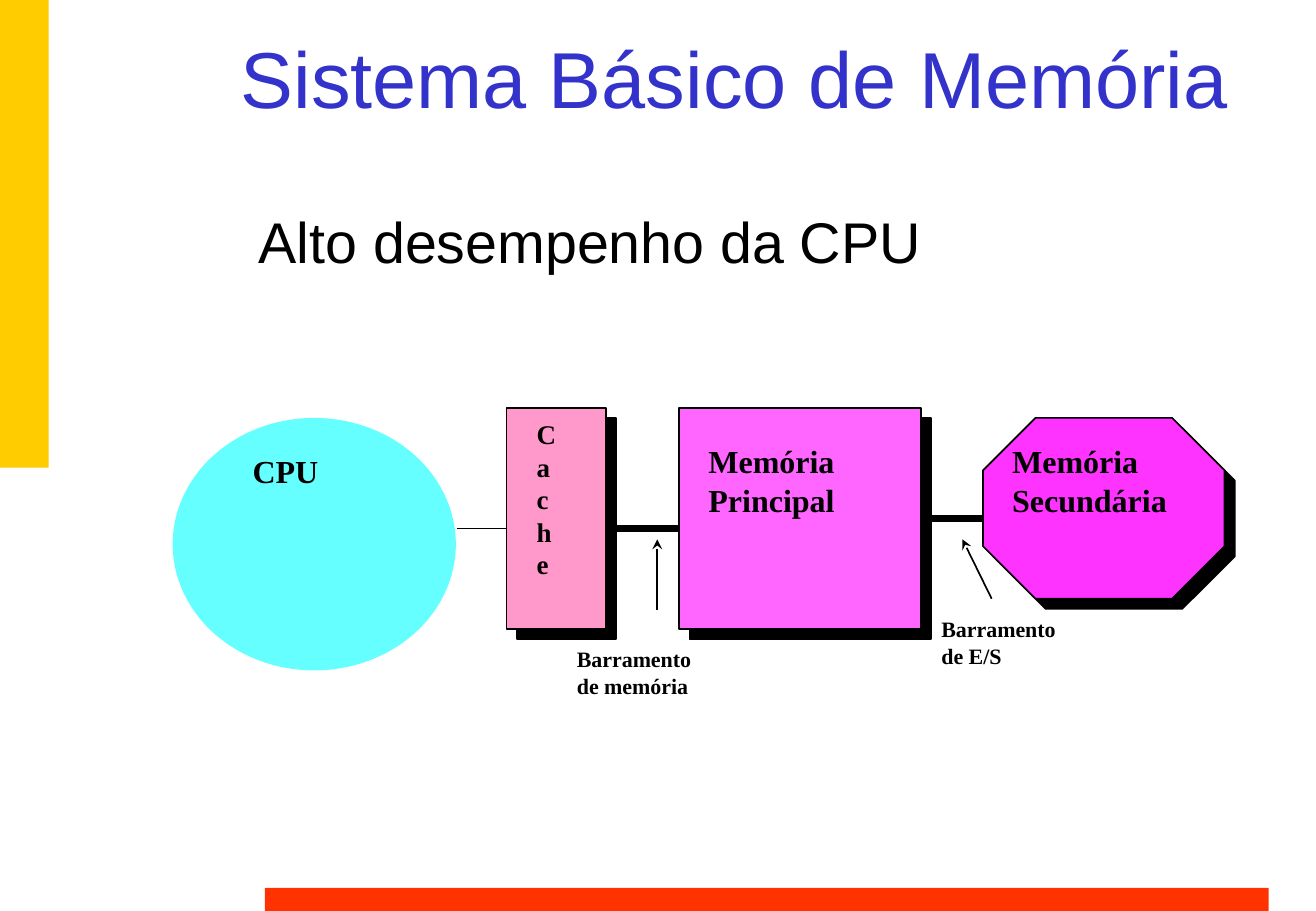
from pptx import Presentation
from pptx.dml.color import RGBColor
from pptx.enum.shapes import MSO_CONNECTOR as Link, MSO_SHAPE as Shape
from pptx.enum.text import MSO_ANCHOR as Anchor, MSO_AUTO_SIZE as Fit, PP_ALIGN as Align
from pptx.oxml.ns import qn
from pptx.util import Cm, Pt
from lxml.etree import SubElement

COLORS = {
    "black": "000000", "title": "3333CC", "yellow": "FFCC00", "red": "FF3300",
    "cpu": "66FFFF", "cache": "FF99CC", "main": "FF66FF", "secondary": "FF33FF",
}
TITLE = ("Sistema Básico de Memória", (4.88, 0, 21.59, 3.23))
SUBTITLE = ("Alto desempenho da CPU", (4.93, 4.24, 21.54, 2.79))
BARS = [("yellow", (0, 0, 1.02, 9.78)), ("red", (5.54, 18.57, 20.98, 0.48))]
BLOCKS = [
    ("cpu", Shape.OVAL, (3.61, 8.74, 5.92, 5.28)),
    ("cache", Shape.RECTANGLE, (10.59, 8.53, 2.08, 4.62)),
    ("main", Shape.RECTANGLE, (14.2, 8.53, 5.05, 4.62)),
    ("secondary", Shape.OCTAGON, (20.55, 8.74, 5.05, 3.78)),
]
LABELS = [
    (["CPU"], 19, (5.08, 9.35, 1.8, 1.02)),
    (list("Cache"), 16, (11.02, 8.64, 0.81, 3.61)),
    (["Memória", "Principal"], 19, (14.61, 9.14, 3.07, 1.83)),
    (["Memória", "Secundária"], 19, (20.96, 9.14, 3.68, 1.83)),
    (["Barramento", "de memória"], 13, (11.86, 13.41, 2.84, 1.3)),
    (["Barramento", "de E/S"], 13, (19.48, 12.78, 2.95, 1.3)),
]
LINKS = [
    ((9.55, 11.05), (10.57, 11.05), 1, False),
    ((12.73, 11.05), (14.17, 11.05), 4, False),
    ((13.74, 12.75), (13.74, 11.28), 1, True),
    ((20.73, 12.52), (20.12, 11.28), 1, True),
]
IO_BUS = ((19.25, 10.84), (20.52, 10.84), 4, False)


def color(name):
    return RGBColor.from_string(COLORS[name])


def lengths(values):
    return [Cm(value) for value in values]


def write(box, lines, size, font, tint, bold=False, insets=(0.2, 0.1)):
    frame = box.text_frame
    frame.margin_left = frame.margin_right = Cm(insets[0])
    frame.margin_top = frame.margin_bottom = Cm(insets[1])
    for index, line in enumerate(lines):
        para = frame.paragraphs[0] if index == 0 else frame.add_paragraph()
        para.alignment = Align.LEFT
        span = para.add_run()
        span.text = line
        span.font.name, span.font.size, span.font.bold = font, Pt(size), bold
        span.font.color.rgb = color(tint)
    return frame


def add_block(page, kind, place, fill):
    block = page.shapes.add_shape(kind, *lengths(place))
    block.shadow.inherit = False
    block.fill.solid()
    block.fill.fore_color.rgb = color(fill)
    block.line.fill.background()
    return block


def outline_with_shadow(block):
    block.line.color.rgb = color("black")
    block.line.width = Pt(1)
    effects = block._element.spPr.find(qn("a:effectLst"))
    shadow = SubElement(effects, qn("a:outerShdw"), dist=str(Pt(8.5)),
                        dir="2700000", algn="ctr", rotWithShape="0")
    SubElement(shadow, qn("a:srgbClr"), val=COLORS["black"])


def add_link(page, start, end, width, arrow):
    link = page.shapes.add_connector(Link.STRAIGHT, *lengths(start + end))
    link.line.color.rgb = color("black")
    link.line.width = Pt(width)
    if arrow:
        SubElement(link.line._get_or_add_ln(), qn("a:tailEnd"), type="stealth")
    SubElement(link._element.spPr, qn("a:effectLst"))
    return link


def main():
    deck = Presentation()
    deck.slide_width, deck.slide_height = Cm(27.51), Cm(19.05)
    page = deck.slides.add_slide(deck.slide_layouts[5])

    title = page.shapes.title
    title.left, title.top, title.width, title.height = lengths(TITLE[1])
    frame = write(title, [TITLE[0]], 47, "Arial", "title", insets=(0.15, 0.08))
    frame.vertical_anchor = Anchor.MIDDLE
    frame.auto_size = Fit.NONE

    for fill, place in BARS:
        add_block(page, Shape.RECTANGLE, place, fill)

    subtitle = page.shapes.add_textbox(*lengths(SUBTITLE[1]))
    frame = write(subtitle, [SUBTITLE[0]], 34, "Arial", "black", insets=(0.48, 0.08))
    frame.word_wrap = True

    blocks = {}
    for name, kind, place in BLOCKS:
        blocks[name] = add_block(page, kind, place, name)
        if name != "cpu":
            outline_with_shadow(blocks[name])
    blocks["secondary"].adjustments[0] = 0.29

    for link in LINKS:
        add_link(page, *link)
    add_link(page, *IO_BUS).begin_connect(blocks["main"], 3)

    for lines, size, place in LABELS:
        label = page.shapes.add_textbox(*lengths(place))
        frame = write(label, lines, size, "Times New Roman", "black", bold=True)
        frame.word_wrap = False
        frame.auto_size = Fit.SHAPE_TO_FIT_TEXT

    deck.save("out.pptx")


if __name__ == "__main__":
    main()
